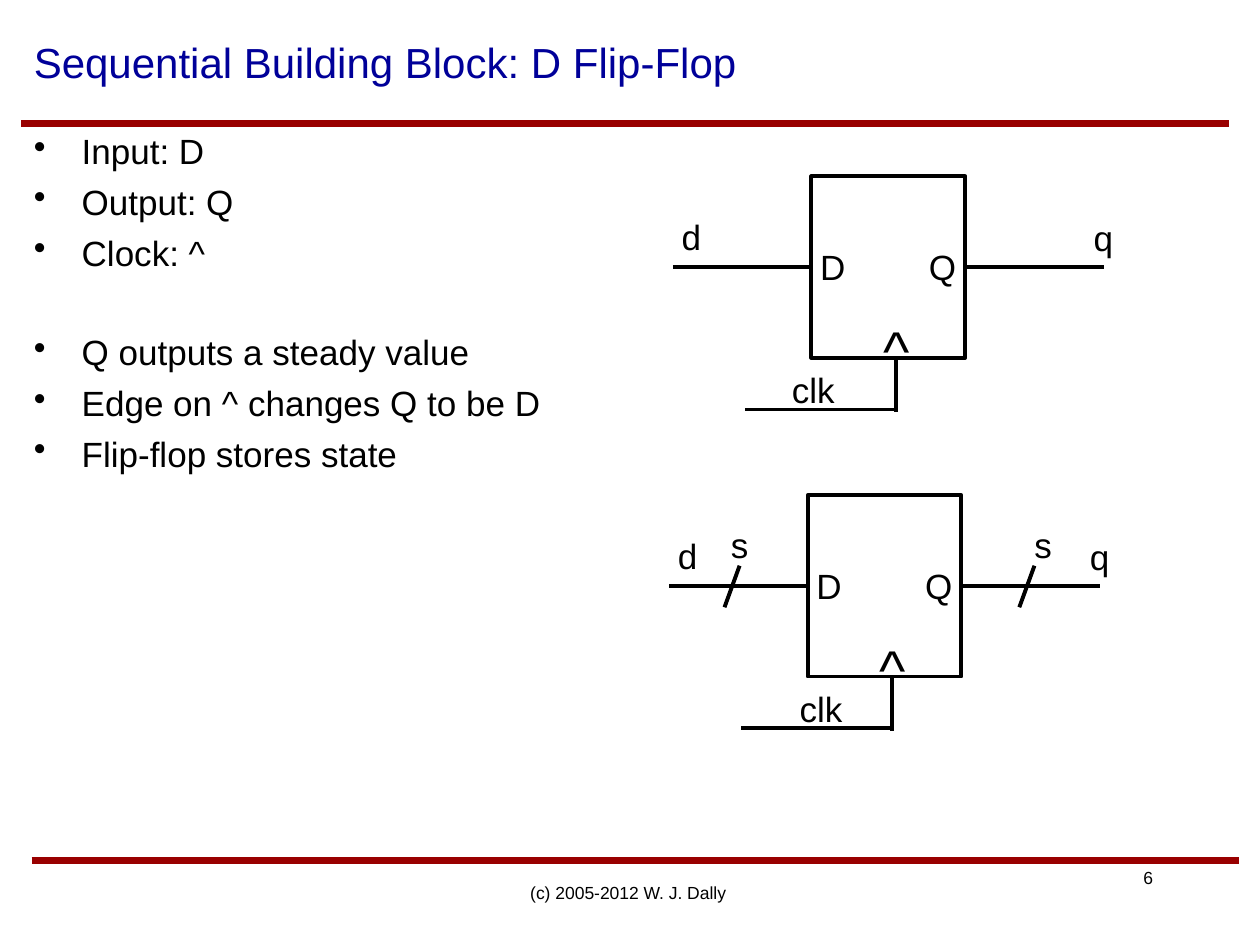
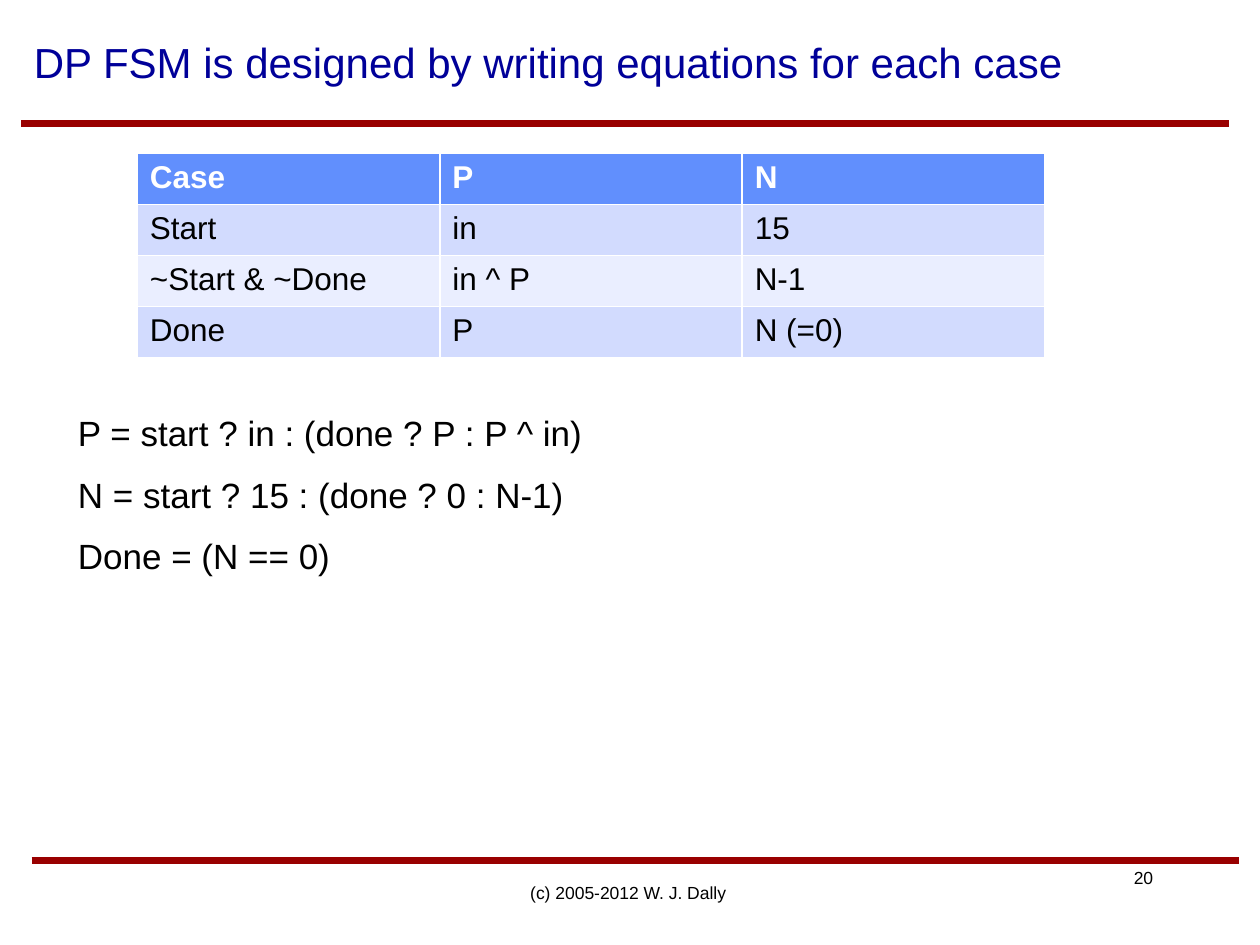
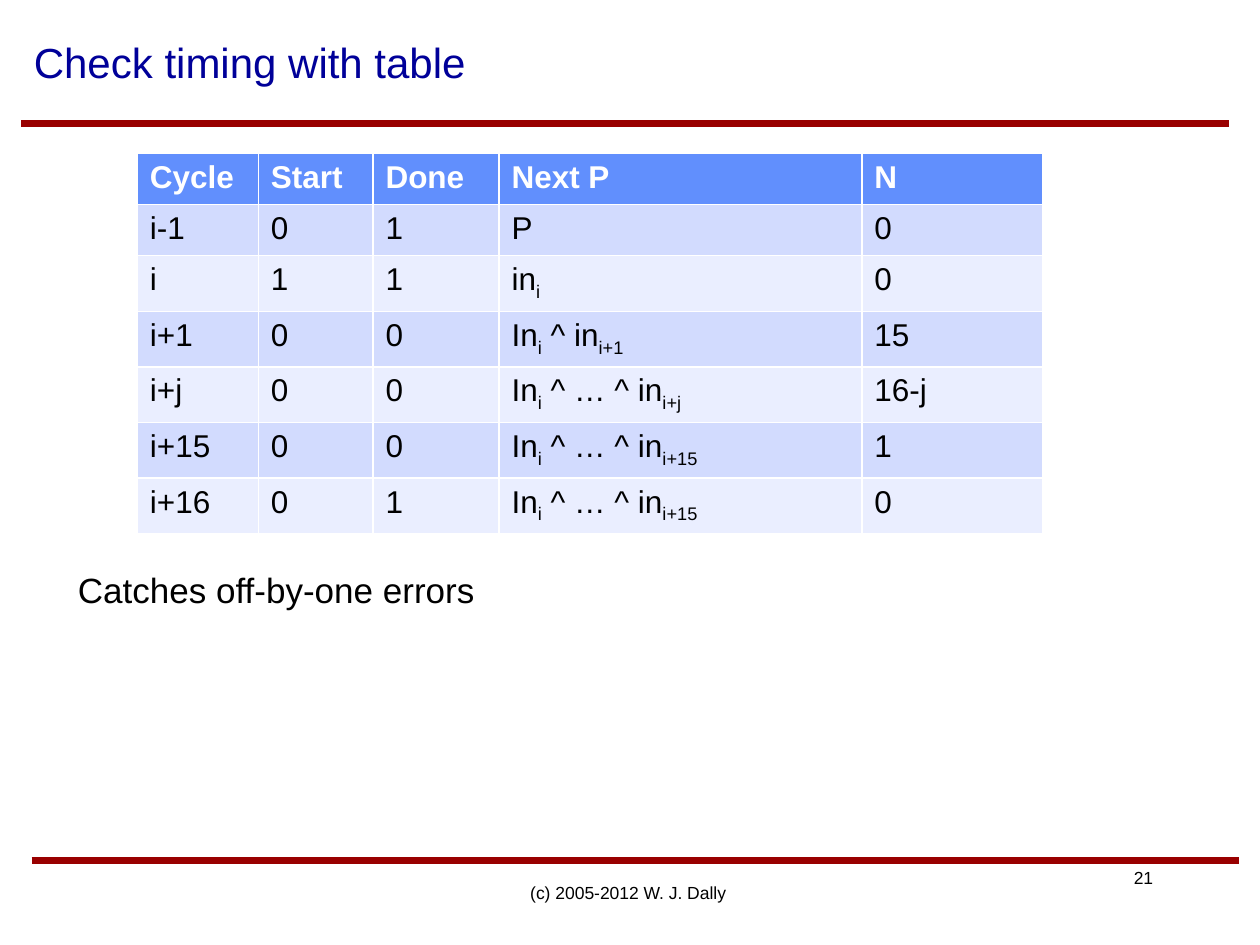
import pptx
import pptx.dml.color
import pptx.enum.shapes
import pptx.enum.text
import pptx.oxml
import pptx.oxml.ns
import pptx.util

Inches = pptx.util.Inches
Pt = pptx.util.Pt
ALIGN = pptx.enum.text.PP_ALIGN
ANCHOR = pptx.enum.text.MSO_ANCHOR

COLORS = {
    "title": "000099",
    "rule": "990000",
    "ink": "000000",
    "white": "FFFFFF",
    "header": "618FFD",
    "odd_row": "D2DBFE",
    "even_row": "EAEEFF",
}
FONT = "Arial"
FOOTER = "(c) 2005-2012 W. J. Dally"
BODY_SIZE = 20
INSETS = ("margin_left", "margin_top", "margin_right", "margin_bottom")
ZERO_INSETS = dict.fromkeys(INSETS, 0)
BULLET_INDENT = Inches(0.38)


def rgb(name):
    return pptx.dml.color.RGBColor.from_string(COLORS[name])


def apply_format(target, values):
    for name, value in values.items():
        setattr(target, name, value)


def add_run(paragraph, text, size, color="ink", bold=False, subscript=False):
    run = paragraph.add_run()
    run.text = text
    apply_format(run.font, {"name": FONT, "size": Pt(size), "bold": bold})
    run.font.color.rgb = rgb(color)
    if subscript:
        run._r.get_or_add_rPr().set("baseline", "-25000")


def add_text(shapes, lines, left, top, width, height, size=BODY_SIZE,
             color="ink", spacing=0, align=ALIGN.LEFT, **frame_format):
    box = shapes.add_textbox(*map(Inches, (left, top, width, height)))
    frame = box.text_frame
    apply_format(frame, {"word_wrap": True, **frame_format})
    for index, line in enumerate(lines):
        paragraph = frame.paragraphs[0] if index == 0 else frame.add_paragraph()
        apply_format(paragraph, {"alignment": align, "space_before": Pt(spacing)})
        add_run(paragraph, line, size, color)
    return frame


def add_label(shapes, text, left, top, width, height=0.33, size=BODY_SIZE):
    add_text(shapes, [text], left, top, width, height, size, align=ALIGN.CENTER,
             word_wrap=False, vertical_anchor=ANCHOR.MIDDLE, **ZERO_INSETS)


def add_line(shapes, start, end, color="ink", width=2.25):
    line = shapes.add_connector(pptx.enum.shapes.MSO_CONNECTOR.STRAIGHT,
                                *map(Inches, (*start, *end)))
    line.line.color.rgb = rgb(color)
    line.line.width = Pt(width)
    properties = line._element.spPr
    properties.append(pptx.oxml.parse_xml(
        f"<a:effectLst {pptx.oxml.ns.nsdecls('a')}/>"))


def add_bullets(slide, groups):
    lines = [line for group in groups for line in group]
    frame = add_text(slide.shapes, lines, 0.17, 0.98, 9.58, 5.85, spacing=5)
    for paragraph in frame.paragraphs:
        properties = paragraph._p.get_or_add_pPr()
        properties.set("marL", str(BULLET_INDENT))
        properties.set("indent", str(-BULLET_INDENT))
        properties.append(pptx.oxml.parse_xml(
            f"<a:buChar {pptx.oxml.ns.nsdecls('a')} char='•'/>"))
    first = 0
    for group in groups[:-1]:
        first += len(group)
        frame.paragraphs[first].space_before = Pt(33)


def add_flip_flop(slide, left, top, clock_label, bus_width=None):
    shapes = slide.shapes.add_group_shape().shapes
    width, height, wire = 1.22, 1.44, 1.1
    middle = top + height / 2
    right = left + width

    body = shapes.add_shape(pptx.enum.shapes.MSO_SHAPE.RECTANGLE,
                            *map(Inches, (left, top, width, height)))
    body.shadow.inherit = False
    body.fill.background()
    body.line.color.rgb = rgb("ink")
    body.line.width = Pt(2.25)

    add_label(shapes, "D", left + 0.07, top + 0.55, 0.2)
    add_label(shapes, "Q", left + 0.93, top + 0.55, 0.22)
    add_label(shapes, "^", left + 0.57, top + 1.11, 0.21, 0.53, 32)
    add_label(shapes, "d", left - 1.03, top + 0.31, 0.15)
    add_label(shapes, "q", left + 2.24, top + 0.32, 0.15)
    add_label(shapes, "clk", left + clock_label, top + 1.53, 0.59)

    add_line(shapes, (left - wire, middle), (left, middle))
    add_line(shapes, (right, middle), (right + wire, middle))
    clock = left + 0.67
    add_line(shapes, (clock, top + height), (clock, top + 1.87))
    add_line(shapes, (clock, top + 1.85), (left - 0.53, top + 1.85))

    if bus_width:
        for slash, label in ((left - 0.6, left - 0.61), (left + 1.74, left + 1.8)):
            add_line(shapes, (slash + 0.06, middle - 0.16),
                     (slash - 0.06, middle + 0.17))
            add_label(shapes, bus_width, label, top + 0.23, 0.14)


def add_grid(slide, rows, column_widths):
    row_height = Inches(0.405)
    table = slide.shapes.add_table(
        len(rows), len(column_widths), Inches(1.09), Inches(1.22),
        Inches(sum(column_widths)), row_height * len(rows)).table
    for column, width in zip(table.columns, column_widths):
        column.width = Inches(width)
    for row_index, values in enumerate(rows):
        table.rows[row_index].height = row_height
        header = row_index == 0
        fill = "header" if header else ("even_row", "odd_row")[row_index % 2]
        for column_index, value in enumerate(values):
            cell = table.cell(row_index, column_index)
            cell.fill.solid()
            cell.fill.fore_color.rgb = rgb(fill)
            paragraph = cell.text_frame.paragraphs[0]
            for part_index, part in enumerate(value.split("|")):
                if part:
                    add_run(paragraph, part, 18, "white" if header else "ink",
                            header, part_index % 2 == 1)


def add_statements(slide, lines, top, height):
    add_text(slide.shapes, lines, 0.52, top, 9, height, spacing=11)


def add_slide(presentation, title, number):
    slide = presentation.slides.add_slide(presentation.slide_layouts[6])
    shapes = slide.shapes
    for left, top in ((0.17, 0.98), (0.25, 6.83)):
        add_line(shapes, (left, top), (left + 9.58, top), "rule", 4)
    add_text(shapes, [str(number)], 7.5, 6.83, 1.75, 0.27, 10, align=ALIGN.RIGHT)
    add_text(shapes, [FOOTER], 3.4, 6.83, 3.17, 0.5, 10, align=ALIGN.CENTER,
             word_wrap=False, vertical_anchor=ANCHOR.MIDDLE)
    add_text(shapes, [title], 0.17, 0, 9.83, 0.98, 24, "title",
             vertical_anchor=ANCHOR.MIDDLE)
    return slide


def main():
    presentation = pptx.Presentation()
    apply_format(presentation, {"slide_width": Inches(10), "slide_height": Inches(7.5)})

    slide = add_slide(presentation, "Sequential Building Block: D Flip-Flop", 6)
    add_bullets(slide, [
        ["Input: D", "Output: Q", "Clock: ^"],
        ["Q outputs a steady value", "Edge on ^ changes Q to be D",
         "Flip-flop stores state"],
    ])
    add_flip_flop(slide, 6.44, 1.4, -0.28)
    add_flip_flop(slide, 6.41, 3.93, -0.19, "s")

    slide = add_slide(
        presentation, "DP FSM is designed by writing equations for each case", 20)
    add_grid(slide, [
        ["Case", "P", "N"],
        ["Start", "in", "15"],
        ["~Start & ~Done", "in ^ P", "N-1"],
        ["Done", "P", "N (=0)"],
    ], [2.4] * 3)
    add_statements(slide, [
        "P = start ? in : (done ? P : P ^ in)",
        "N = start ? 15 : (done ? 0 : N-1)",
        "Done = (N == 0)",
    ], 3.22, 1.45)

    slide = add_slide(presentation, "Check timing with table", 21)
    add_grid(slide, [
        ["Cycle", "Start", "Done", "Next P", "N"],
        ["i-1", "0", "1", "P", "0"],
        ["i", "1", "1", "in|i|", "0"],
        ["i+1", "0", "0", "In|i| ^ in|i+1|", "15"],
        ["i+j", "0", "0", "In|i| ^ … ^ in|i+j|", "16-j"],
        ["i+15", "0", "0", "In|i| ^ … ^ in|i+15|", "1"],
        ["i+16", "0", "1", "In|i| ^ … ^ in|i+15|", "0"],
    ], [0.96, 0.91, 1, 2.88, 1.44])
    add_statements(slide, ["Catches off-by-one errors"], 4.46, 0.44)

    presentation.save("out.pptx")


if __name__ == "__main__":
    main()
